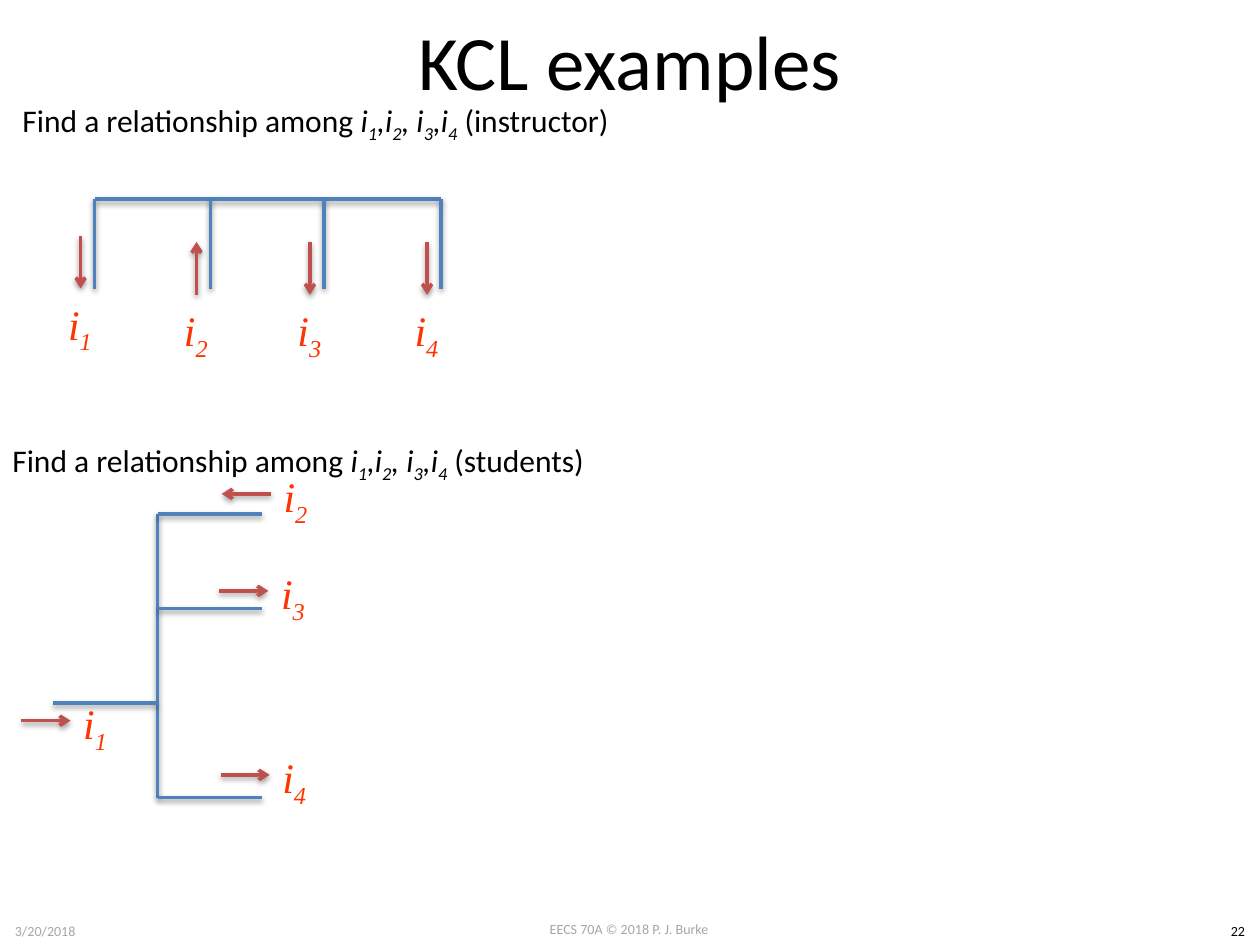
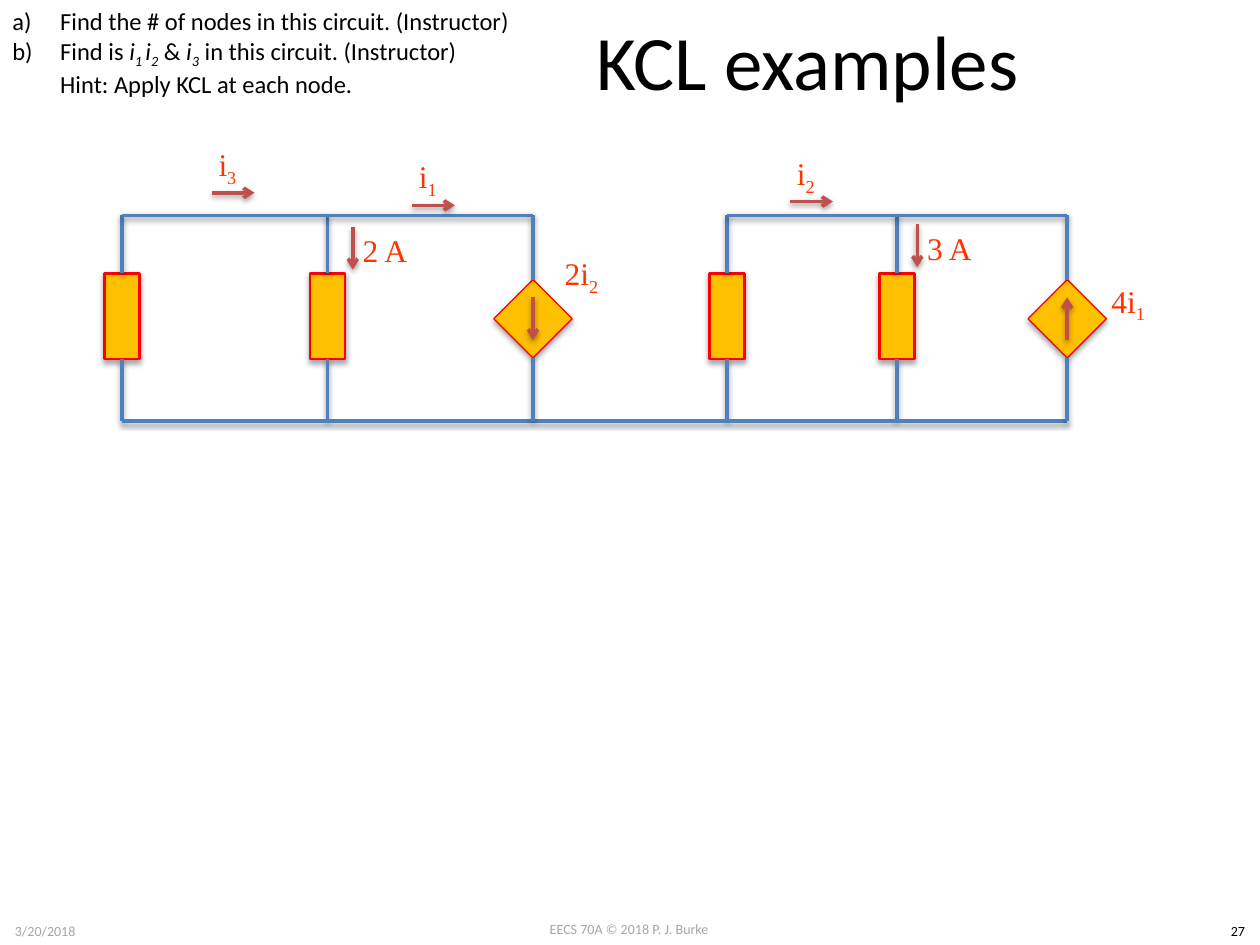
from dataclasses import dataclass

from lxml.etree import SubElement
from pptx import Presentation
from pptx.dml.color import RGBColor
from pptx.enum.shapes import MSO_CONNECTOR, MSO_SHAPE
from pptx.enum.text import MSO_ANCHOR as Anchor, PP_ALIGN as Align
from pptx.oxml.ns import qn
from pptx.util import Inches, Pt


@dataclass(frozen=True)
class Theme:
    body_font: str = "Calibri"
    symbol_font: str = "Times New Roman"
    ink: str = "000000"
    muted: str = "A6A6A6"
    wire: str = "4F81BD"
    current: str = "C0504D"
    symbol: str = "FF3300"
    part_fill: str = "FFC000"
    part_edge: str = "FF0000"
    title_size: int = 44
    symbol_size: int = 24
    question_size: int = 18
    value_size: int = 18
    task_size: int = 14
    footer_size: int = 8
    line_width: int = 2


THEME = Theme()
CURRENTS = (("i", "i"), ("1", "is"), (",i", "i"), ("2", "is"), (", i", "i"),
            ("3", "is"), (",i", "i"), ("4", "is"))


def cast_shadow(item, opacity, distance):
    props = item._element.spPr
    for old in props.findall(qn("a:effectLst")):
        props.remove(old)
    effects = SubElement(props, qn("a:effectLst"))
    shadow = SubElement(effects, qn("a:outerShdw"), blurRad="40000",
                        dist=str(distance), dir="5400000", rotWithShape="0")
    black = SubElement(shadow, qn("a:srgbClr"), val="000000")
    SubElement(black, qn("a:alpha"), val=str(opacity * 1000))


def draw_line(shapes, x1, y1, x2, y2, color=THEME.wire, arrow=False):
    line = shapes.add_connector(MSO_CONNECTOR.STRAIGHT,
                                *map(Inches, (x1, y1, x2, y2)))
    line.line.color.rgb = RGBColor.from_string(color)
    line.line.width = Pt(THEME.line_width)
    if arrow:
        SubElement(line.line._get_or_add_ln(), qn("a:tailEnd"), type="arrow")
    cast_shadow(line, 38, 20000)


def draw_current(shapes, x1, y1, x2, y2):
    draw_line(shapes, x1, y1, x2, y2, THEME.current, arrow=True)


def draw_part(shapes, center_x, center_y, width, height, edge, rotation=0):
    part = shapes.add_shape(
        MSO_SHAPE.RECTANGLE, Inches(center_x - width / 2),
        Inches(center_y - height / 2), Inches(width), Inches(height))
    part.rotation = rotation
    part.shadow.inherit = False
    part.fill.solid()
    part.fill.fore_color.rgb = RGBColor.from_string(THEME.part_fill)
    part.line.color.rgb = RGBColor.from_string(THEME.part_edge)
    part.line.width = Pt(edge)
    cast_shadow(part, 35, 23000)


def add_runs(paragraph, pieces, size, color=THEME.ink, font=THEME.body_font):
    for text, style in pieces:
        if text == "\n":
            paragraph.add_line_break()
            continue
        run = paragraph.add_run()
        run.text = text
        run.font.name = font
        run.font.size = Pt(size)
        run.font.italic = "i" in style
        run.font.color.rgb = RGBColor.from_string(color)
        if "s" in style:
            run._r.get_or_add_rPr().set("baseline", "-25000")


def add_text(slide, box, pieces, size, color=THEME.ink, font=THEME.body_font,
             align=Align.CENTER, anchor=Anchor.MIDDLE, wrap=True):
    frame = slide.shapes.add_textbox(*map(Inches, box)).text_frame
    frame.word_wrap = wrap
    frame.vertical_anchor = anchor
    frame.paragraphs[0].alignment = align
    add_runs(frame.paragraphs[0], pieces, size, color, font)
    return frame


def add_symbol(slide, box, letters, subscript="", size=THEME.value_size, style=""):
    pieces = [(letters, style)]
    if subscript:
        pieces.append((subscript, style + "s"))
    add_text(slide, box, pieces, size, THEME.symbol, THEME.symbol_font)


def add_frame(deck, number, title_box):
    slide = deck.slides.add_slide(deck.slide_layouts[6])
    add_text(slide, (3.83, 7.26, 2.33, 0.24), [("EECS 70A © 2018 P. J. Burke", "")],
             THEME.footer_size, THEME.muted, anchor=Anchor.TOP)
    add_text(slide, (9.65, 7.27, 0.35, 0.24), [(str(number), "")],
             THEME.footer_size, anchor=Anchor.TOP)
    add_text(slide, (0.02, 7.27, 2.07, 0.23), [("3/20/2018", "")],
             THEME.footer_size, THEME.muted, align=Align.LEFT)
    add_text(slide, title_box, [("KCL examples", "")], THEME.title_size)
    return slide


def add_question(slide, box, audience):
    pieces = [("Find a relationship among ", ""), *CURRENTS, (f" ({audience})", "")]
    add_text(slide, box, pieces, THEME.question_size, align=Align.LEFT,
             anchor=Anchor.TOP, wrap=False)


def draw_comb(slide, left, top, width, height):
    shapes = slide.shapes
    draw_line(shapes, left, top, left + width, top)
    teeth = (("1", 0, 0.29, True), ("2", 0.92, 0.34, False),
             ("3", 1.82, 0.34, True), ("4", width, 0.34, True))
    for subscript, offset, drop, downward in teeth:
        x = left + offset
        draw_line(shapes, x, top + height, x, top)
        arrow_x = x - 0.11
        start, end = top + drop, top + drop + 0.42
        ends = (start, end) if downward else (end, start)
        draw_current(shapes, arrow_x, ends[0], arrow_x, ends[1])
        add_symbol(slide, (arrow_x - 0.39, end, 0.77, 0.61), "i", subscript,
                   THEME.symbol_size, "i")


def draw_tree(slide, left, top, width, height):
    shapes = slide.shapes
    trunk, right = left + width / 2, left + width
    spacing = height / 3
    draw_line(shapes, trunk, top + height, trunk, top)
    for level, start, end in ((0, trunk, right), (1, trunk, right),
                              (2, left, trunk), (3, trunk, right)):
        y = top + level * spacing
        draw_line(shapes, start, y, end, y)
    flows = (("2", 1.34, -0.16, False), ("3", 1.32, 0.61, True),
             ("1", -0.25, 1.64, True), ("4", 1.33, 2.07, True))
    for subscript, dx, dy, rightward in flows:
        x, y = left + dx, top + dy
        ends = (x, x + 0.39) if rightward else (x + 0.39, x)
        draw_current(shapes, ends[0], y, ends[1], y)
        add_symbol(slide, (x + 0.2, y - 0.26, 0.77, 0.61), "i", subscript,
                   THEME.symbol_size, "i")


def add_tasks(slide, box):
    first = [("Find the # of nodes in this circuit. (Instructor)", "")]
    second = [("Find is ", ""), ("i", "i"), ("1 ", "is"), ("i", "i"), ("2", "is"),
              (" & ", ""), ("i", "i"), ("3", "is"),
              (" in this circuit. (Instructor)", ""), ("\n", ""),
              ("Hint: Apply KCL at each node.", "")]
    frame = add_text(slide, box, first, THEME.task_size, align=Align.LEFT,
                     anchor=Anchor.TOP, wrap=False)
    add_runs(frame.add_paragraph(), second, THEME.task_size)
    for paragraph in frame.paragraphs:
        props = paragraph._p.get_or_add_pPr()
        props.set("marL", str(Inches(0.38)))
        props.set("indent", str(-Inches(0.38)))
        SubElement(props, qn("a:buFont"), typeface="+mj-lt")
        SubElement(props, qn("a:buAutoNum"), type="alphaLcParenR")


def draw_resistor(slide, x, top, bottom):
    shapes = slide.shapes.add_group_shape().shapes
    center, half = top + 0.8, 0.34
    draw_part(shapes, x, center, 0.28, 2 * half, 1.5)
    draw_line(shapes, x, bottom, x, center + half)
    draw_line(shapes, x, center - half, x, top)


def draw_source(slide, x, top, bottom, downward):
    shapes = slide.shapes.add_group_shape().shapes
    center, half = top + 0.82, 0.31
    draw_part(shapes, x, center, 0.44, 0.44, 0.75, 45)
    draw_line(shapes, x, center + half, x, bottom)
    draw_line(shapes, x, top, x, center - half)
    reach = 0.17 if downward else -0.17
    draw_current(shapes, x, center - reach, x, center + reach)


def draw_circuit(slide, left, top, width, height):
    shapes = slide.shapes
    bottom = top + height
    for offset in (0, 1.63, 4.8, 6.15):
        draw_resistor(slide, left + offset, top, bottom)
    for start, end, y in ((0, width, bottom), (4.8, width, top), (0, 3.26, top)):
        draw_line(shapes, left + start, y, left + end, y)
    for offset, downward in ((3.26, True), (width, False)):
        draw_source(slide, left + offset, top, bottom, downward)

    for subscript, dx, dy in (("3", 0.71, -0.18), ("1", 2.3, -0.08),
                              ("2", 5.3, -0.11)):
        x, y = left + dx, top + dy
        draw_current(shapes, x, y, x + 0.34, y)
        add_symbol(slide, (x - 0.18, y - 0.45, 0.61, 0.48), "i", subscript)
    for value, dx, dy in (("2 A", 1.83, 0.09), ("3 A", 6.31, 0.07)):
        x, y = left + dx, top + dy
        draw_current(shapes, x, y, x, y + 0.34)
        add_symbol(slide, (x - 0.13, y - 0.12, 0.77, 0.61), value)
    for gain, subscript, dx, dy in (("2i", "2", 3.26, 0.17), ("4i", "1", 7.6, 0.39)):
        add_symbol(slide, (left + dx, top + dy, 0.77, 0.61), gain, subscript)


def build_relationships(deck):
    slide = add_frame(deck, 22, (0.5, 0, 9, 0.95))
    add_question(slide, (0.08, 0.75, 5.12, 0.4), "instructor")
    draw_comb(slide, 0.75, 1.58, 2.75, 0.71)
    add_question(slide, (0, 3.45, 4.84, 0.4), "students")
    draw_tree(slide, 0.42, 4.08, 1.66, 2.25)


def build_node_analysis(deck):
    slide = add_frame(deck, 27, (3.01, 0, 6.8, 0.95))
    add_tasks(slide, (0, 0, 4.17, 0.81))
    draw_circuit(slide, 0.97, 1.71, 7.5, 1.63)


def main():
    deck = Presentation()
    deck.slide_width, deck.slide_height = Inches(10), Inches(7.5)
    build_relationships(deck)
    build_node_analysis(deck)
    deck.save("out.pptx")


if __name__ == "__main__":
    main()
